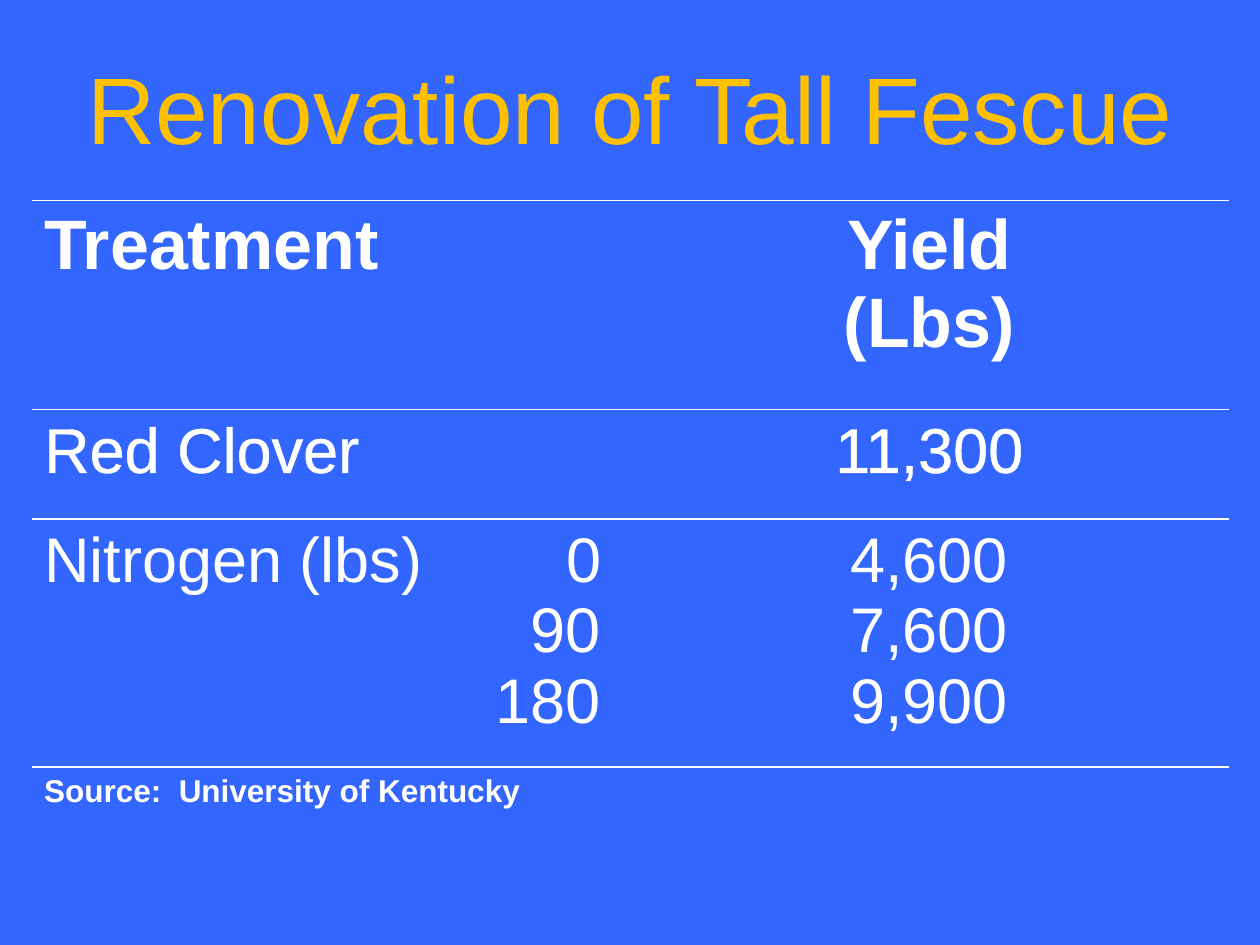
from dataclasses import dataclass

from lxml.etree import SubElement
from pptx import Presentation
from pptx.dml.color import RGBColor
from pptx.enum.text import PP_ALIGN as Align
from pptx.oxml.ns import qn
from pptx.util import Inches, Pt

BLUE, WHITE, GOLD = "3366FF", "FFFFFF", "FFC000"
TAB_STOP = Inches(4.42)


@dataclass
class Row:
    height: float
    cells: list[list[str]]  # one list of lines per column; a lone cell spans the row
    size: int
    bold: bool = False
    color: str = WHITE
    first_align: Align = Align.LEFT
    outlined: bool = False
    edges: str = "TB"


ROWS = [
    Row(1.17, [["Renovation of Tall Fescue"]], 54, color=GOLD,
        first_align=Align.CENTER, edges="B"),
    Row(1.66, [["Treatment"], ["Yield", "(Lbs)"]], 40, bold=True),
    Row(0.87, [["Red Clover"], ["11,300"]], 36, outlined=True),
    Row(1.97, [["Nitrogen (lbs)\t0", "\t90", "\t180"],
               ["4,600", "7,600", "9,900"]], 36),
    Row(0.62, [["Source:  University of Kentucky"]], 18, bold=True, edges="T"),
]


def rgb(value: str) -> RGBColor:
    return RGBColor.from_string(value)


def add_line(parent, tag: str, width: float, color: str | None) -> None:
    line = SubElement(parent, qn(f"a:{tag}"), w=str(Pt(width)))
    if color is None:
        SubElement(line, qn("a:noFill"))
    else:
        fill = SubElement(line, qn("a:solidFill"))
        SubElement(fill, qn("a:srgbClr"), val=color)


def style_cell(cell, edges: str) -> None:
    properties = cell._tc.get_or_add_tcPr()
    for side in "LRTB":
        add_line(properties, f"ln{side}", 1, WHITE if side in edges else None)
    cell.fill.solid()
    cell.fill.fore_color.rgb = rgb(BLUE)


def write_lines(cell, lines: list[str], row: Row, align: Align) -> None:
    frame = cell.text_frame
    font_values = {"name": "Arial", "size": Pt(row.size), "bold": row.bold}
    for index, text in enumerate(lines):
        para = frame.add_paragraph() if index else frame.paragraphs[0]
        para.alignment = align
        if "\t" in text:
            tabs = SubElement(para._p.get_or_add_pPr(), qn("a:tabLst"))
            SubElement(tabs, qn("a:tab"), pos=str(TAB_STOP), algn="r")
        span = para.add_run()
        span.text = text
        if row.outlined:
            add_line(span._r.get_or_add_rPr(), "ln", 0.75, WHITE)
        for name, value in font_values.items():
            setattr(span.font, name, value)
        span.font.color.rgb = rgb(row.color)


def fill_row(table, index: int, row: Row) -> None:
    table.rows[index].height = Inches(row.height)
    cells = list(table.rows[index].cells)
    if len(row.cells) == 1:
        cells[0].merge(cells[1])
    for cell in cells:
        style_cell(cell, row.edges)
    for cell, lines, align in zip(cells, row.cells, (row.first_align, Align.CENTER)):
        write_lines(cell, lines, row, align)


def main() -> None:
    # Page with a plain background
    deck = Presentation()
    deck.slide_width, deck.slide_height = Inches(10), Inches(7.5)
    page = deck.slides.add_slide(deck.slide_layouts[6])
    page.background.fill.solid()
    page.background.fill.fore_color.rgb = rgb(BLUE)

    # Yield table, with the heading and the source as merged rows
    height = sum(row.height for row in ROWS)
    table = page.shapes.add_table(len(ROWS), 2, Inches(0.25), Inches(0.42),
                                  Inches(9.5), Inches(height)).table
    table.first_row = table.horz_banding = False
    for index, row in enumerate(ROWS):
        fill_row(table, index, row)

    deck.save("out.pptx")


if __name__ == "__main__":
    main()
